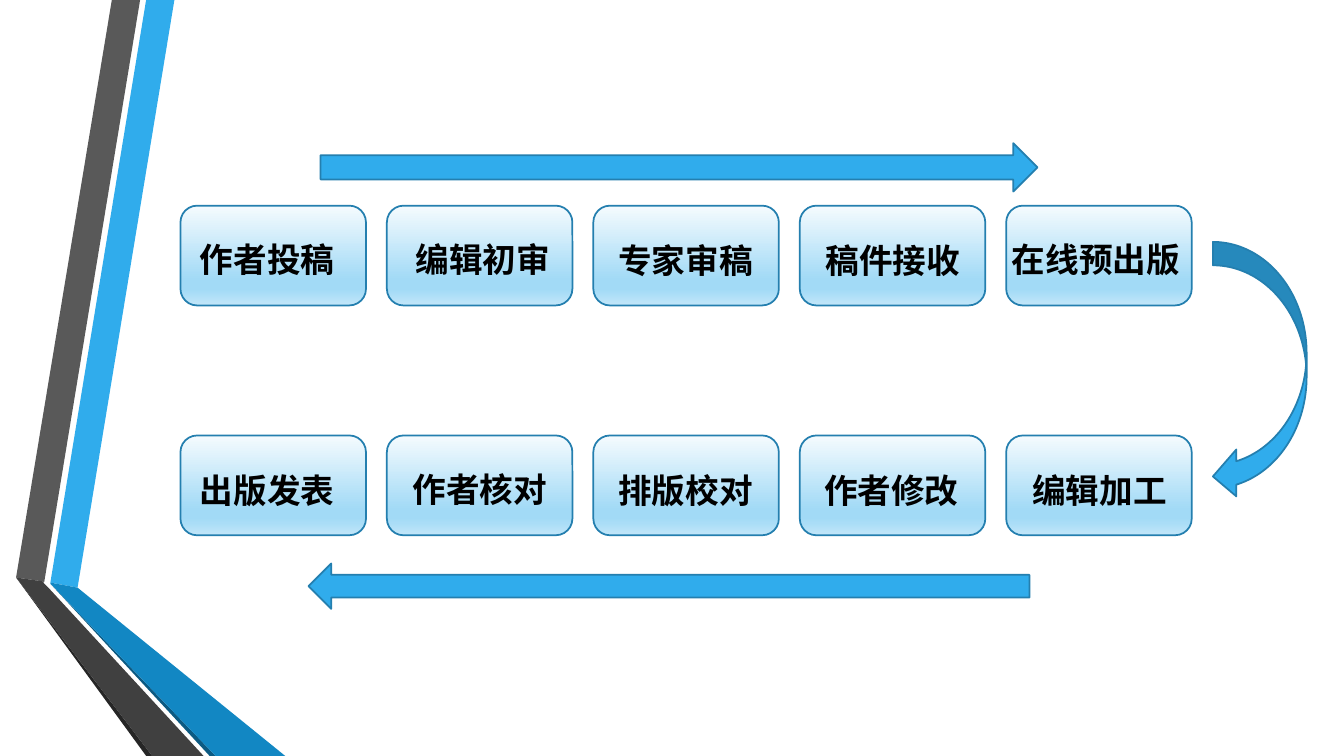
from copy import deepcopy
from dataclasses import dataclass

from pptx import Presentation
from pptx.dml.color import RGBColor
from pptx.enum.shapes import MSO_SHAPE as Preset
from pptx.enum.text import MSO_ANCHOR as Anchor, MSO_AUTO_SIZE as AutoSize, PP_ALIGN as Align
from pptx.shapes.autoshape import Shape
from pptx.slide import Slide
from pptx.util import Inches, Pt


@dataclass(frozen=True)
class Theme:
    accent: str = "30ACEC"
    outline: str = "247FAF"
    text: str = "000000"
    font: str = "Cabin"
    text_size: float = 24
    line_width: float = 1.25
    card_stops: tuple = ((0, "F5FBFE"), (0.74, "A2DAF6"), (0.83, "A2DAF6"), (1, "C1E6F9"))


@dataclass(frozen=True)
class Ribbon:
    color: str
    points: tuple[tuple[float, float], ...]


@dataclass(frozen=True)
class Label:
    text: str
    left: float
    top: float
    width: float


@dataclass(frozen=True)
class StepRow:
    top: float
    labels: tuple[Label, ...]


@dataclass(frozen=True)
class FlowArrow:
    preset: Preset
    left: float
    top: float
    width: float
    height: float


THEME = Theme()
CARD_LEFT, CARD_PITCH, CARD_WIDTH, CARD_HEIGHT = 1.79, 2.0475, 1.84, 0.99
LABEL_HEIGHT = 0.5

RIBBONS = (
    Ribbon(THEME.accent, ((0.5, 5.78), (0.77, 5.83), (1.73, 0), (1.45, 0))),
    Ribbon("595959", ((1.39, 0), (1.11, 0), (0.16, 5.73), (0.44, 5.77))),
    Ribbon("262626", ((0.16, 5.73), (1.45, 7.5), (1.51, 7.5))),
    Ribbon("0C5A82", ((0.5, 5.79), (2.08, 7.5), (2.14, 7.5))),
    Ribbon("1287C3", ((0.5, 5.79), (2.14, 7.5), (2.83, 7.5), (0.77, 5.83), (0.5, 5.78))),
    Ribbon("404040", ((2.02, 7.5), (0.48, 5.83), (0.43, 5.78), (0.44, 5.77),
                      (0.16, 5.73), (1.51, 7.5))),
)
STEP_ROWS = (
    StepRow(2.04, (
        Label("作者投稿", 1.85, 2.32, 1.6),
        Label("编辑初审", 3.97, 2.32, 1.64),
        Label("专家审稿", 6.02, 2.33, 1.56),
        Label("稿件接收", 8.08, 2.33, 1.55),
        Label("在线预出版", 9.92, 2.32, 1.9),
    )),
    StepRow(4.32, (
        Label("出版发表", 1.85, 4.61, 1.6),
        Label("作者核对", 3.96, 4.6, 1.6),
        Label("排版校对", 6.02, 4.61, 1.56),
        Label("作者修改", 8.04, 4.61, 1.6),
        Label("编辑加工", 10.1, 4.61, 1.61),
    )),
)
FLOW_ARROWS = (
    FlowArrow(Preset.CURVED_LEFT_ARROW, 12.03, 2.4, 0.93, 2.56),
    FlowArrow(Preset.RIGHT_ARROW, 3.18, 1.42, 7.11, 0.48),
    FlowArrow(Preset.LEFT_ARROW, 3.06, 5.59, 7.15, 0.45),
)


def rgb(color: str) -> RGBColor:
    return RGBColor.from_string(color)


def apply_format(target: object, values: dict) -> None:
    for name, value in values.items():
        setattr(target, name, value)


def fill_solid(shape: Shape, color: str) -> None:
    shape.shadow.inherit = False
    shape.fill.solid()
    shape.fill.fore_color.rgb = rgb(color)


def outline_shape(shape: Shape) -> None:
    shape.line.color.rgb = rgb(THEME.outline)
    shape.line.width = Pt(THEME.line_width)


def draw_ribbon(slide: Slide, ribbon: Ribbon) -> None:
    start, *others = [(Inches(x), Inches(y)) for x, y in ribbon.points]
    builder = slide.shapes.build_freeform(*start)
    builder.add_line_segments(others, close=True)
    shape = builder.convert_to_shape()
    fill_solid(shape, ribbon.color)
    shape.line.fill.background()


def draw_card(slide: Slide, left: float, top: float) -> None:
    shape = slide.shapes.add_shape(
        Preset.ROUNDED_RECTANGLE,
        Inches(left), Inches(top), Inches(CARD_WIDTH), Inches(CARD_HEIGHT))
    shape.shadow.inherit = False
    shape.fill.gradient()
    stop_list = shape._element.spPr.xpath("./a:gradFill/a:gsLst")[0]
    while len(stop_list) < len(THEME.card_stops):
        stop_list.append(deepcopy(stop_list[0]))
    for stop, (position, color) in zip(shape.fill.gradient_stops, THEME.card_stops):
        stop.position = position
        stop.color.rgb = rgb(color)
    shape.fill.gradient_angle = 270
    outline_shape(shape)


def draw_label(slide: Slide, label: Label) -> None:
    box = slide.shapes.add_textbox(
        Inches(label.left), Inches(label.top), Inches(label.width), Inches(LABEL_HEIGHT))
    apply_format(box.text_frame, {
        "word_wrap": True,
        "auto_size": AutoSize.SHAPE_TO_FIT_TEXT,
        "vertical_anchor": Anchor.TOP,
    })
    paragraph = box.text_frame.paragraphs[0]
    paragraph.alignment = Align.CENTER
    run = paragraph.add_run()
    run.text = label.text
    apply_format(run.font, {"name": THEME.font, "size": Pt(THEME.text_size), "bold": True})
    run.font.color.rgb = rgb(THEME.text)


def draw_step_row(slide: Slide, row: StepRow) -> None:
    for column in range(len(row.labels)):
        draw_card(slide, CARD_LEFT + column * CARD_PITCH, row.top)
    for label in row.labels:
        draw_label(slide, label)


def draw_flow_arrow(slide: Slide, arrow: FlowArrow) -> None:
    shape = slide.shapes.add_shape(
        arrow.preset,
        Inches(arrow.left), Inches(arrow.top), Inches(arrow.width), Inches(arrow.height))
    fill_solid(shape, THEME.accent)
    outline_shape(shape)


def main() -> None:
    presentation = Presentation()
    apply_format(presentation, {"slide_width": Inches(13.33), "slide_height": Inches(7.5)})
    slide = presentation.slides.add_slide(presentation.slide_layouts.get_by_name("Blank"))
    for ribbon in RIBBONS:
        draw_ribbon(slide, ribbon)
    for row in STEP_ROWS:
        draw_step_row(slide, row)
    for arrow in FLOW_ARROWS:
        draw_flow_arrow(slide, arrow)
    presentation.save("out.pptx")


if __name__ == "__main__":
    main()
